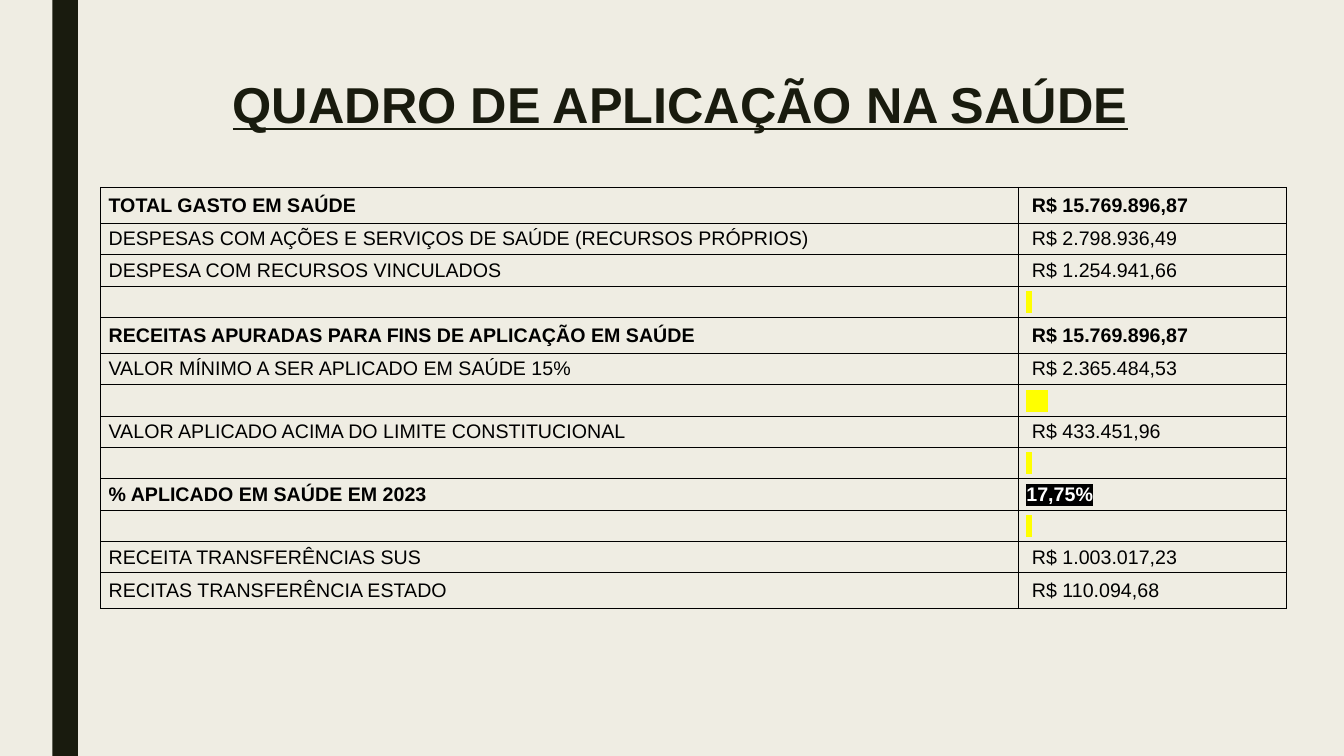
from lxml import etree
from pptx import Presentation
from pptx.dml.color import RGBColor
from pptx.enum.shapes import MSO_SHAPE
from pptx.enum.text import MSO_ANCHOR, PP_ALIGN
from pptx.oxml.ns import qn
from pptx.util import Pt

RECT = MSO_SHAPE.RECTANGLE
MIDDLE = MSO_ANCHOR.MIDDLE
CENTER = PP_ALIGN.CENTER

CREAM = RGBColor(0xEF, 0xED, 0xE3)
DARK = RGBColor(0x19, 0x1B, 0x0E)
BLACK = RGBColor(0, 0, 0)
WHITE = RGBColor(0xFF, 0xFF, 0xFF)
YELLOW = RGBColor(0xFF, 0xFF, 0)

FONT = "Arial"
COLS = (655.6, 191.2)
TALL, LOW = 25.7, 22.3
TALL_ROWS = (0, 4, 12)
BOLD_ROWS = (0, 4, 9)
RATE_ROW = 9

# Label and value; rows without a label hold a marked hard space
ROWS = [
    ("TOTAL GASTO EM SAÚDE", " R$ 15.769.896,87"),
    ("DESPESAS COM AÇÕES E SERVIÇOS DE SAÚDE (RECURSOS PRÓPRIOS)",
     " R$ 2.798.936,49"),
    ("DESPESA COM RECURSOS VINCULADOS", " R$ 1.254.941,66"),
    ("", " "),
    ("RECEITAS APURADAS PARA FINS DE APLICAÇÃO EM SAÚDE",
     " R$ 15.769.896,87"),
    ("VALOR MÍNIMO A SER APLICADO EM SAÚDE 15%", " R$ 2.365.484,53"),
    ("", "    "),
    ("VALOR APLICADO ACIMA DO LIMITE CONSTITUCIONAL", " R$ 433.451,96"),
    ("", " "),
    ("% APLICADO EM SAÚDE EM 2023", "17,75%"),
    ("", " "),
    ("RECEITA TRANSFERÊNCIAS SUS", " R$ 1.003.017,23"),
    ("RECITAS TRANSFERÊNCIA ESTADO", " R$ 110.094,68"),
]


def add_color(parent, color):
    etree.SubElement(parent, qn("a:srgbClr"), val=str(color))


def write(frame, text, size=14, color=BLACK, bold=False, line=False,
          mark=None, align=None, space=None):
    para = frame.paragraphs[0]
    para.alignment = align
    para.line_spacing = space
    if not text:
        # Keep an empty cell as low as the text size allows
        etree.SubElement(para._p, qn("a:endParaRPr"), sz=str(size * 100))
        return
    run = para.add_run()
    run.text = text
    font = run.font
    font.name, font.size, font.bold = FONT, Pt(size), bold
    font.underline = line
    font.color.rgb = color
    if mark is not None:
        light = etree.Element(qn("a:highlight"))
        add_color(light, mark)
        font._element.find(qn("a:solidFill")).addnext(light)


def add_bar(slide):
    bar = slide.shapes.add_shape(RECT, Pt(37.5), 0, Pt(18.2), Pt(540))
    bar.shadow.inherit = False
    bar.fill.solid()
    bar.fill.fore_color.rgb = DARK
    bar.line.fill.background()


def add_title(slide, text):
    box = slide.shapes.add_textbox(Pt(108), Pt(54), Pt(756), Pt(60))
    box.text_frame.word_wrap = True
    write(box.text_frame, text, size=36, color=DARK, bold=True, line=True,
          align=CENTER, space=0.89)


def add_edges(cell):
    props = cell._tc.get_or_add_tcPr()
    for spot, side in enumerate(("lnL", "lnR", "lnT", "lnB")):
        edge = etree.Element(qn("a:" + side), w=str(Pt(1)))
        add_color(etree.SubElement(edge, qn("a:solidFill")), BLACK)
        props.insert(spot, edge)


def fill_cell(cell, text, **style):
    cell.vertical_anchor = MIDDLE
    cell.margin_left = cell.margin_right = Pt(5.6)
    cell.margin_top = cell.margin_bottom = Pt(2.8)
    cell.fill.background()
    add_edges(cell)
    write(cell.text_frame, text, **style)


def add_grid(slide):
    high = [TALL if n in TALL_ROWS else LOW for n in range(len(ROWS))]
    frame = slide.shapes.add_table(len(ROWS), len(COLS), Pt(72), Pt(133.9),
                                   Pt(sum(COLS)), Pt(sum(high)))
    table = frame.table
    table.first_row = table.horz_banding = False
    for col, width in zip(table.columns, COLS):
        col.width = Pt(width)
    for n, (label, value) in enumerate(ROWS):
        table.rows[n].height = Pt(high[n])
        bold = n in BOLD_ROWS
        color, mark = BLACK, None
        if n == RATE_ROW:
            color, mark = WHITE, BLACK
        elif not label:
            mark = YELLOW
        fill_cell(table.cell(n, 0), label, bold=bold)
        fill_cell(table.cell(n, 1), value, bold=bold, color=color, mark=mark)


def main():
    deck = Presentation()
    deck.slide_width, deck.slide_height = Pt(960), Pt(540)
    slide = deck.slides.add_slide(deck.slide_layouts[6])
    back = slide.background.fill
    back.solid()
    back.fore_color.rgb = CREAM
    add_bar(slide)
    add_title(slide, "QUADRO DE APLICAÇÃO NA SAÚDE")
    add_grid(slide)
    deck.save("out.pptx")


if __name__ == "__main__":
    main()
